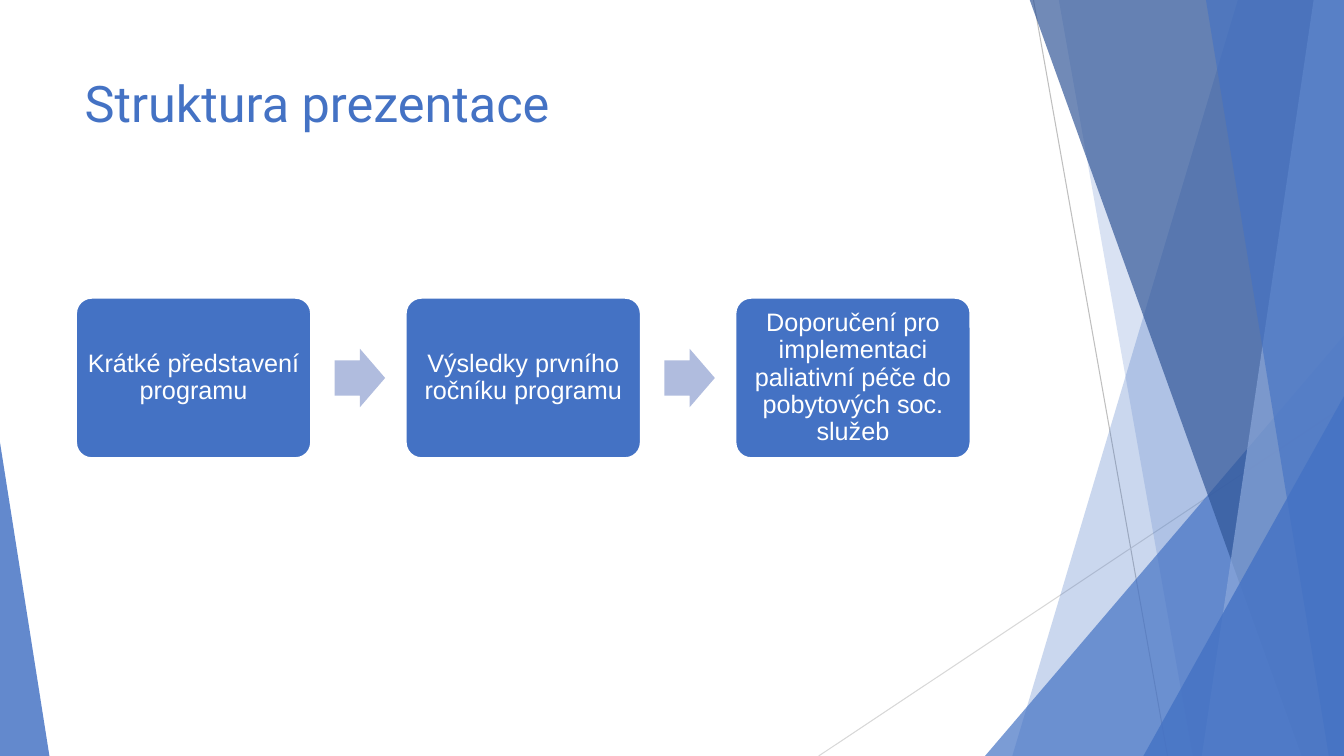
from pptx import Presentation
from pptx import util as u
from pptx.dml.color import RGBColor
from pptx.enum import shapes, text
from pptx.oxml.ns import qn
from lxml import etree

BLUE = RGBColor(0x44, 0x72, 0xC4)
DARK_BLUE = RGBColor(0x2F, 0x54, 0x96)
LIGHT_BLUE = RGBColor(0x8D, 0xA9, 0xDB)
ARROW_BLUE = RGBColor(0xB0, 0xBC, 0xDE)
GREY = RGBColor(0xBF, 0xBF, 0xBF)
LIGHT_GREY = RGBColor(0xD8, 0xD8, 0xD8)
WHITE = RGBColor(0xFF, 0xFF, 0xFF)

WIDTH, HEIGHT = 13.33, 7.5

deck = Presentation()
deck.slide_width, deck.slide_height = u.Inches(WIDTH), u.Inches(HEIGHT)
slide = deck.slides.add_slide(deck.slide_layouts[5])


def paint(part, colour, opacity=100):
    part.shadow.inherit = False
    part.line.fill.background()
    part.fill.solid()
    part.fill.fore_color.rgb = colour
    if opacity < 100:
        tint = part.fill._xPr.find(qn("a:solidFill"))[0]
        etree.SubElement(tint, qn("a:alpha"), val=str(opacity * 1000))


def add_block(preset, left, top, width, height, adjustments):
    block = slide.shapes.add_shape(preset, *map(u.Inches, (left, top, width, height)))
    for index, value in enumerate(adjustments):
        block.adjustments[index] = value
    return block


# Thin rays behind the facets
for start, end, colour in [
    ((10.25, 0), (11.58, HEIGHT), GREY),
    ((WIDTH, 4.03), (8.12, HEIGHT), LIGHT_GREY),
]:
    ray = slide.shapes.add_connector(
        shapes.MSO_CONNECTOR.STRAIGHT, *map(u.Inches, start + end))
    ray.line.color.rgb = colour
    ray.line.width = u.Pt(0.75)
    etree.SubElement(ray._element.spPr, qn("a:effectLst"))

# Facets, back to front: a slab (top x, bottom x) runs to the right edge,
# a peak (left, top, width, apex) stands on the bottom edge
facets = [
    ((12.28, 10.04), BLUE, 28),
    ((10.5, 11.83), BLUE, 20),
    ((9.77, 3.33, 3.56, 1), BLUE, 70),
    ((10.21, 12.91), DARK_BLUE, 68),
    ((13.03, 11.92), LIGHT_BLUE, 68),
    ((11.96, 13.18), BLUE, 63),
    ((11.34, 3.93, 1.99, 1), BLUE, 80),
    ((0, 4.39, 0.49, 0), BLUE, 83),
]
for outline, colour, opacity in facets:
    if len(outline) == 2:
        top_x, bottom_x = outline
        corners = [(top_x, -0.01), (WIDTH, -0.01), (WIDTH, HEIGHT), (bottom_x, HEIGHT)]
        points = [(u.Inches(x), u.Inches(y)) for x, y in corners]
        builder = slide.shapes.build_freeform(*points[0])
        builder.add_line_segments(points[1:], close=True)
        facet = builder.convert_to_shape()
    else:
        left, top, width, apex = outline
        facet = add_block(shapes.MSO_SHAPE.ISOSCELES_TRIANGLE,
                          left, top, width, HEIGHT - top, [apex])
    paint(facet, colour, opacity)

# Title
title = slide.shapes.title
title.left, title.top, title.width, title.height = map(u.Inches, (0.74, 0.67, 9.4, 1.44))
title.text_frame.vertical_anchor = text.MSO_ANCHOR.TOP
heading = title.text_frame.paragraphs[0]
heading.alignment = text.PP_ALIGN.LEFT
heading_run = heading.add_run()
heading_run.text = "Struktura prezentace"
heading_run.font.name = "Roboto"
heading_run.font.size = u.Pt(36)
heading_run.font.color.rgb = BLUE

# Row of steps with an arrow between neighbours
steps = [
    "Krátké představení programu",
    "Výsledky prvního ročníku programu",
    "Doporučení pro implementaci paliativní péče do pobytových soc. služeb",
]
ROW_LEFT, ROW_TOP, PITCH = 0.75, 2.95, 3.27
STEP_W, STEP_H = 2.34, 1.6
ARROW_W, ARROW_H, ARROW_GAP = 0.5, 0.58, 0.23

for column, wording in enumerate(steps):
    left = ROW_LEFT + column * PITCH
    if column:
        arrow = add_block(shapes.MSO_SHAPE.RIGHT_ARROW,
                          left - PITCH + STEP_W + ARROW_GAP,
                          ROW_TOP + (STEP_H - ARROW_H) / 2,
                          ARROW_W, ARROW_H, [0.6, 0.5])
        paint(arrow, ARROW_BLUE)

    step = add_block(shapes.MSO_SHAPE.ROUNDED_RECTANGLE,
                     left, ROW_TOP, STEP_W, STEP_H, [0.1])
    paint(step, BLUE)
    step.line.color.rgb = WHITE
    step.line.width = u.Pt(2)

    frame = step.text_frame
    frame.word_wrap = True
    frame.vertical_anchor = text.MSO_ANCHOR.MIDDLE
    frame.margin_left = frame.margin_right = u.Inches(0.07)
    frame.margin_top = frame.margin_bottom = u.Inches(0.07)
    label = frame.paragraphs[0]
    label.alignment = text.PP_ALIGN.CENTER
    label.line_spacing = 0.9
    label_run = label.add_run()
    label_run.text = wording
    label_run.font.name = "Arial"
    label_run.font.size = u.Pt(18)
    label_run.font.color.rgb = WHITE

deck.save("out.pptx")
